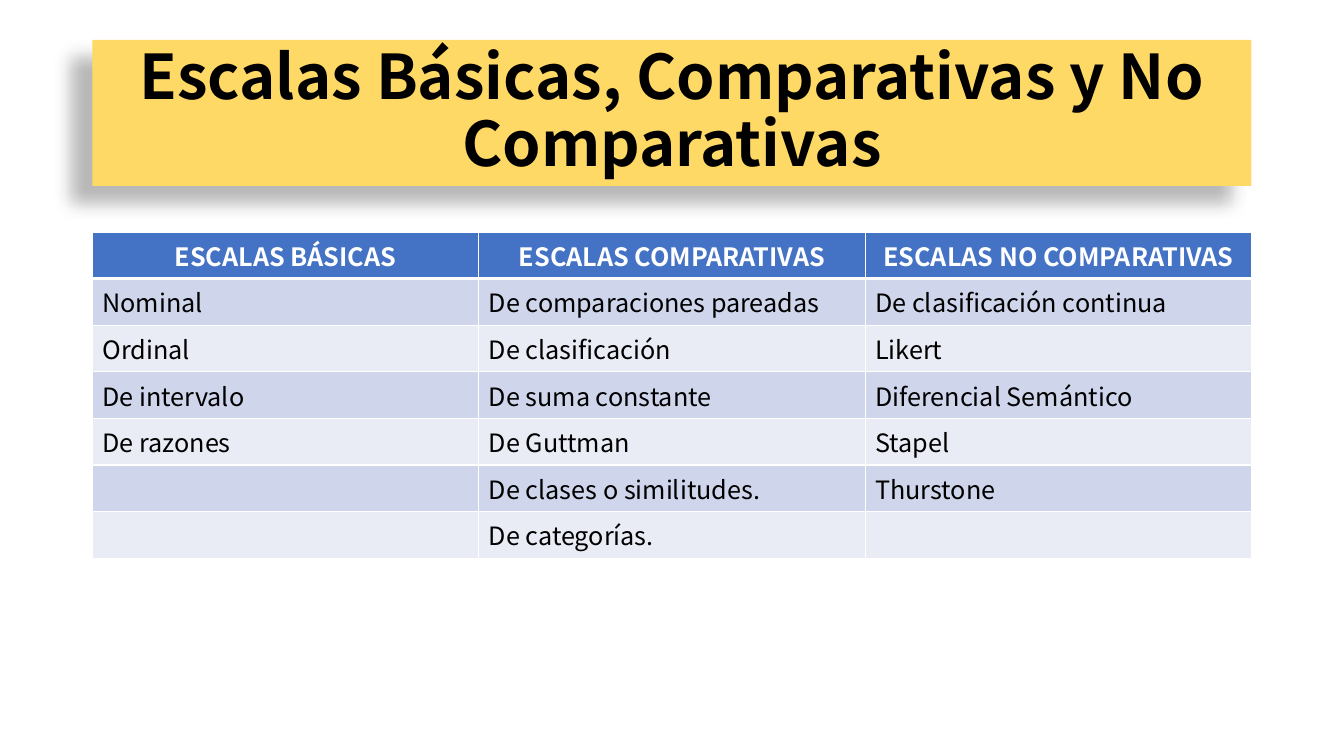
"""Build a slide with a title banner and a table of measurement scales."""
from dataclasses import dataclass
from itertools import zip_longest

from lxml.etree import SubElement
from pptx import Presentation
from pptx.dml.color import RGBColor
from pptx.enum.shapes import MSO_SHAPE
from pptx.enum.text import MSO_ANCHOR, PP_ALIGN
from pptx.oxml.ns import qn
from pptx.slide import Slide
from pptx.table import _Cell
from pptx.text.text import TextFrame
from pptx.util import Pt

PX = 9525
WIDE, HIGH = 1280, 720
LEFT, SPAN = 88, 1104
ROW = 39
HEX = {
    "gold": "FFD966",
    "blue": "4472C4",
    "odd": "CFD5EA",
    "even": "E9EBF5",
    "white": "FFFFFF",
    "black": "000000",
}


@dataclass
class Style:
    size: int
    bold: bool
    color: str
    align: PP_ALIGN


@dataclass
class Column:
    head: str
    items: list[str]


TITLE = Style(44, True, "black", PP_ALIGN.CENTER)
HEAD = Style(18, True, "white", PP_ALIGN.CENTER)
BODY = Style(18, False, "black", PP_ALIGN.LEFT)
COLUMNS = [
    Column("ESCALAS BÁSICAS", ["Nominal", "Ordinal", "De intervalo", "De razones"]),
    Column("ESCALAS COMPARATIVAS", [
        "De comparaciones pareadas", "De clasificación", "De suma constante",
        "De Guttman", "De clases o similitudes.", "De categorías."]),
    Column("ESCALAS NO COMPARATIVAS", [
        "De clasificación continua", "Likert", "Diferencial Semántico",
        "Stapel", "Thurstone"]),
]


def write(frame: TextFrame, text: str, style: Style) -> None:
    line = frame.paragraphs[0]
    line.alignment = style.align
    target = line.font
    if text:
        run = line.add_run()
        run.text = text
        target = run.font
    form = {"name": "Noto Sans CJK SC", "size": Pt(style.size), "bold": style.bold}
    for key, value in form.items():
        setattr(target, key, value)
    target.color.rgb = RGBColor.from_string(HEX[style.color])


def banner(slide: Slide, text: str) -> None:
    box = slide.shapes.add_shape(
        MSO_SHAPE.RECTANGLE, LEFT * PX, 38 * PX, SPAN * PX, 139 * PX)
    box.fill.solid()
    box.fill.fore_color.rgb = RGBColor.from_string(HEX["gold"])
    box.line.fill.background()
    box.shadow.inherit = False
    glow = SubElement(
        box._element.spPr.find(qn("a:effectLst")), qn("a:outerShdw"),
        blurRad="150000", dist="250000", dir="8460000", algn="tl", rotWithShape="0")
    tint = SubElement(glow, qn("a:srgbClr"), val=HEX["black"])
    SubElement(tint, qn("a:alpha"), val="28000")
    frame = box.text_frame
    form = {"word_wrap": True, "vertical_anchor": MSO_ANCHOR.MIDDLE}
    for key, value in form.items():
        setattr(frame, key, value)
    write(frame, text, TITLE)
    frame.paragraphs[0].line_spacing = 0.9


def edge(cell: _Cell, widths: dict[str, int]) -> None:
    props = cell._tc.get_or_add_tcPr()
    for side, width in widths.items():
        line = SubElement(props, qn(f"a:ln{side}"), w=str(Pt(width)))
        fill = SubElement(line, qn("a:solidFill"))
        SubElement(fill, qn("a:srgbClr"), val=HEX["white"])


def grid(slide: Slide, columns: list[Column]) -> None:
    rows = [[col.head for col in columns]]
    rows += zip_longest(*(col.items for col in columns), fillvalue="")
    table = slide.shapes.add_table(
        len(rows), len(columns), LEFT * PX, 221 * PX,
        SPAN * PX, len(rows) * ROW * PX).table
    for r, texts in enumerate(rows):
        color = "blue" if r == 0 else "odd" if r % 2 else "even"
        for c, text in enumerate(texts):
            cell = table.cell(r, c)
            edge(cell, {"L": 1, "R": 1, "T": 3 if r == 1 else 1, "B": 3 if r == 0 else 1})
            cell.fill.solid()
            cell.fill.fore_color.rgb = RGBColor.from_string(HEX[color])
            write(cell.text_frame, text, BODY if r else HEAD)


def main() -> None:
    deck = Presentation()
    deck.slide_width, deck.slide_height = WIDE * PX, HIGH * PX
    slide = deck.slides.add_slide(deck.slide_layouts[6])
    banner(slide, "Escalas Básicas, Comparativas y No Comparativas")
    grid(slide, COLUMNS)
    deck.save("out.pptx")


if __name__ == "__main__":
    main()
